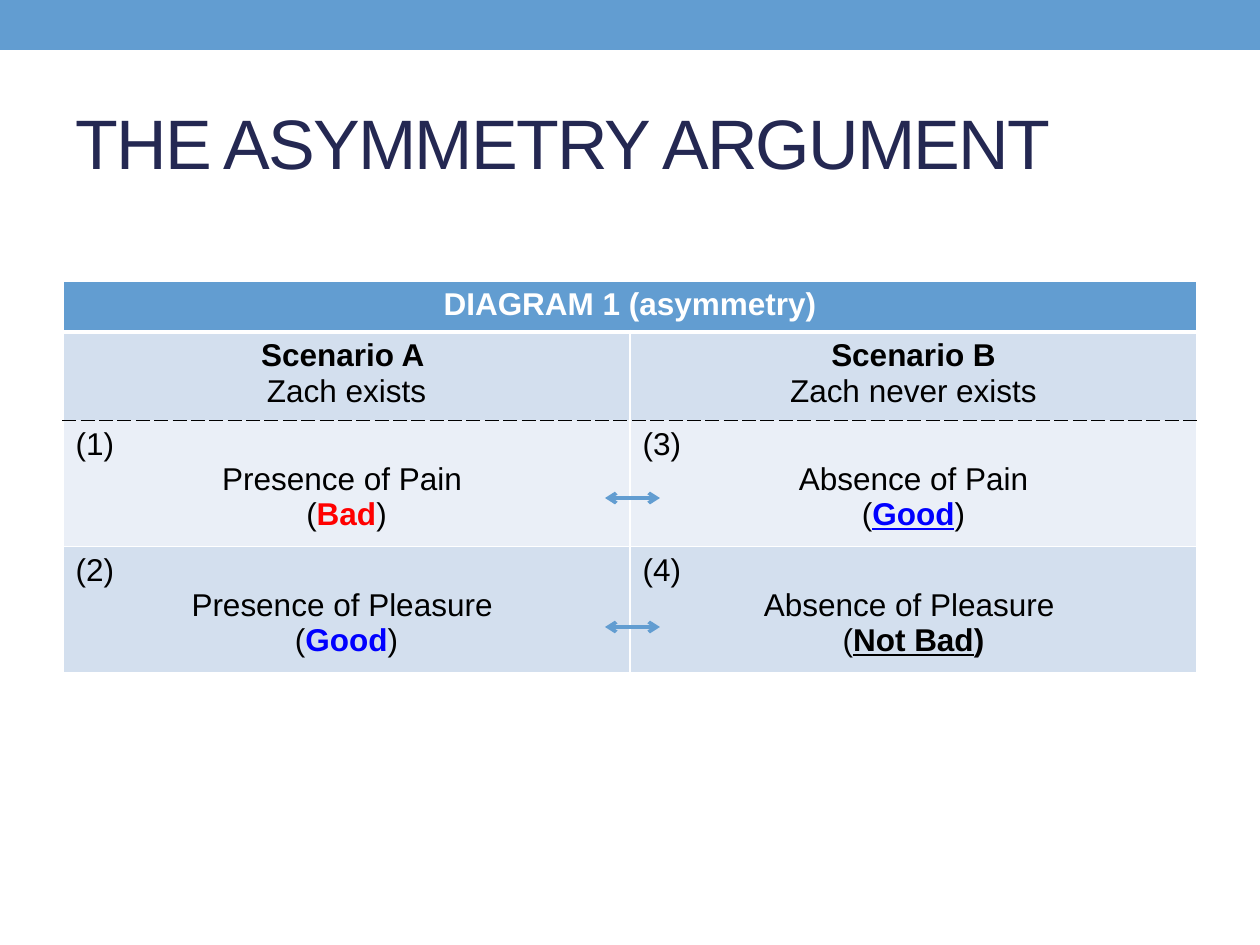
"""Build the asymmetry argument slide: title, scenario table and comparison arrows."""
from dataclasses import dataclass

from lxml import etree
from pptx import Presentation
from pptx import util as u
from pptx.dml.color import RGBColor
from pptx.enum import shapes, text
from pptx.oxml import ns

EMU_PER_PX = 914400 / 126
FONT = "Arial"
COLORS = {
    "accent": "629DD1", "title": "242852", "white": "FFFFFF", "black": "000000",
    "band": "D3DFEE", "pale": "EAEFF7", "bad": "FF0000", "good": "0000FF",
}


@dataclass(frozen=True)
class Words:
    text: str
    color: str = "black"
    bold: bool = False
    underline: bool = False
    size: int = 18


@dataclass(frozen=True)
class Line:
    words: tuple[Words, ...]
    centered: bool = True


@dataclass(frozen=True)
class Border:
    color: str = "white"
    points: int = 1
    dash: str = "solid"


@dataclass(frozen=True)
class Row:
    height: int
    fill: str
    cells: tuple[tuple[Line, ...], ...]
    top: Border = Border()
    bottom: Border = Border()


@dataclass(frozen=True)
class Arrow:
    left: int
    right: int
    y: int


def px(length: int) -> u.Emu:
    """Turn pixels into EMU."""
    return u.Emu(round(length * EMU_PER_PX))


def rgb(color: str) -> RGBColor:
    """Look up a named colour."""
    return RGBColor.from_string(COLORS[color])


def add_words(paragraph, words: Words):
    """Add one formatted run, or a line break."""
    if words.text == "\n":
        paragraph.add_line_break()
        return None
    run = paragraph.add_run()
    run.text = words.text
    run.font.name = FONT
    run.font.size = u.Pt(words.size)
    run.font.bold = words.bold
    run.font.underline = words.underline
    run.font.color.rgb = rgb(words.color)
    return run


def scenario(name: str, outcome: str) -> tuple[Line, ...]:
    """Compose a scenario heading."""
    return Line((Words(name, bold=True),)), Line((Words(outcome),))


def judgement(number: int, state: str, *verdict: Words) -> tuple[Line, ...]:
    """Compose a numbered state with its verdict below."""
    return (Line((Words(f"({number})"),), centered=False),
            Line((Words(state),)), Line((Words("("), *verdict)))


def draw_border(cell, side: str, position: int, border: Border) -> None:
    """Draw one side of a table cell."""
    edge = etree.Element(ns.qn(f"a:{side}"), w=str(u.Pt(border.points)))
    fill = etree.SubElement(edge, ns.qn("a:solidFill"))
    etree.SubElement(fill, ns.qn("a:srgbClr"), val=COLORS[border.color])
    etree.SubElement(edge, ns.qn("a:prstDash"), val=border.dash)
    cell._tc.get_or_add_tcPr().insert(position, edge)


def draw_cell(cell, row: Row, lines: tuple[Line, ...]) -> None:
    """Fill, border and write one table cell."""
    cell.fill.solid()
    cell.fill.fore_color.rgb = rgb(row.fill)
    sides = {"lnL": Border(), "lnR": Border(), "lnT": row.top, "lnB": row.bottom}
    for position, (side, border) in enumerate(sides.items()):
        draw_border(cell, side, position, border)
    for index, line in enumerate(lines):
        frame = cell.text_frame
        paragraph = frame.add_paragraph() if index else frame.paragraphs[0]
        paragraph.alignment = text.PP_ALIGN.CENTER if line.centered else text.PP_ALIGN.LEFT
        for words in line.words:
            add_words(paragraph, words)


def draw_table(slide, left: int, top: int, width: int, rows: tuple[Row, ...]) -> None:
    """Draw the scenario table with its heading across both columns."""
    height = sum(row.height for row in rows)
    table = slide.shapes.add_table(len(rows), 2, px(left), px(top), px(width), px(height)).table
    table.first_row = table.horz_banding = False
    table.cell(0, 0).merge(table.cell(0, 1))
    for row_index, row in enumerate(rows):
        table.rows[row_index].height = px(row.height)
        for column in range(2):
            lines = row.cells[column] if column < len(row.cells) else ()
            draw_cell(table.cell(row_index, column), row, lines)


def draw_arrow(slide, arrow: Arrow) -> None:
    """Draw a double-headed horizontal arrow."""
    connector = slide.shapes.add_connector(
        shapes.MSO_CONNECTOR.STRAIGHT,
        px(arrow.left), px(arrow.y), px(arrow.right), px(arrow.y))
    connector.line.color.rgb = rgb("accent")
    connector.line.width = u.Pt(2.08)
    outline = connector.line._get_or_add_ln()
    for end in ("headEnd", "tailEnd"):
        etree.SubElement(outline, ns.qn(f"a:{end}"), type="arrow")
    etree.SubElement(connector._element.spPr, ns.qn("a:effectLst"))


def draw_banner(slide) -> None:
    """Draw the band along the top edge."""
    banner = slide.shapes.add_shape(shapes.MSO_SHAPE.RECTANGLE, 0, 0, px(1260), px(50))
    banner.shadow.inherit = False
    banner.fill.solid()
    banner.fill.fore_color.rgb = rgb("accent")
    banner.line.fill.background()


def draw_title(slide, title: Words) -> None:
    """Write the slide title with tightened letter spacing."""
    frame = slide.shapes.add_textbox(px(63), px(73), px(1134), px(136)).text_frame
    frame.word_wrap = True
    frame.vertical_anchor = text.MSO_ANCHOR.MIDDLE
    run = add_words(frame.paragraphs[0], title)
    run.font._element.set("spc", "-100")


DIVIDER = Border("black", 1, "sysDash")
HEADING_RULE = Border(points=3)
CLOSE = Words(")")
ROWS = (
    Row(51, "accent", ((Line((Words("DIAGRAM 1 (asymmetry)", "white", bold=True),)),),),
        bottom=HEADING_RULE),
    Row(83, "band", (scenario("Scenario A ", "Zach exists"),
                     scenario("Scenario B", "Zach never exists")),
        top=HEADING_RULE, bottom=DIVIDER),
    Row(118, "pale", (
        judgement(1, "Presence of Pain ", Words("Bad", "bad", bold=True), CLOSE),
        (Line((Words("(3)"),), centered=False),
         Line((Words("Absence of Pain"), Words("\n"), Words("("),
               Words("Good", "good", bold=True, underline=True), CLOSE)))),
        top=DIVIDER),
    Row(118, "band", (
        judgement(2, "Presence of Pleasure ", Words("Good", "good", bold=True), CLOSE),
        judgement(4, "Absence of Pleasure ", Words("Not Bad", bold=True, underline=True),
                  Words(")", bold=True)))),
)
ARROWS = (Arrow(605, 660, 498), Arrow(605, 660, 627))


def main() -> None:
    """Build and save the slide."""
    deck = Presentation()
    deck.slide_width, deck.slide_height = px(1260), px(945)
    slide = deck.slides.add_slide(deck.slide_layouts[6])
    draw_banner(slide)
    draw_title(slide, Words("THE ASYMMETRY ARGUMENT", "title", size=40))
    draw_table(slide, 63, 281, 1134, ROWS)
    for arrow in ARROWS:
        draw_arrow(slide, arrow)
    deck.save("out.pptx")


if __name__ == "__main__":
    main()
